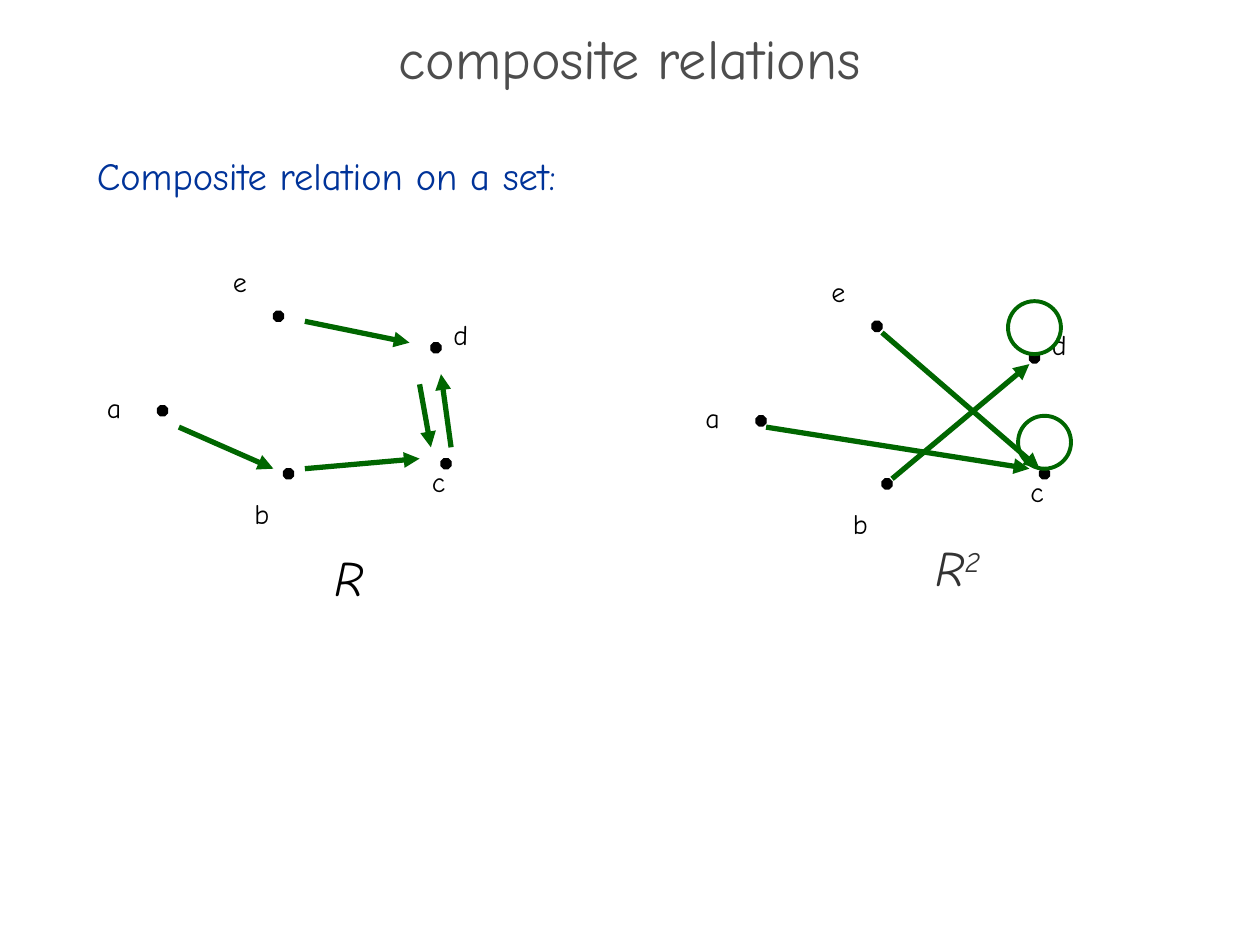
from lxml import etree
from pptx import Presentation
from pptx.dml.color import RGBColor
from pptx.enum.shapes import MSO_CONNECTOR, MSO_SHAPE
from pptx.enum.text import MSO_ANCHOR, PP_ALIGN
from pptx.oxml.ns import qn
from pptx.util import Inches, Pt

OCTAGON, OVAL = MSO_SHAPE.OCTAGON, MSO_SHAPE.OVAL
STRAIGHT = MSO_CONNECTOR.STRAIGHT
TOP, MIDDLE = MSO_ANCHOR.TOP, MSO_ANCHOR.MIDDLE
LEFT, CENTER = PP_ALIGN.LEFT, PP_ALIGN.CENTER

FONT = "Comic Neue"
COLORS = {"title": "4D4D4D", "body": "003399", "node": "000000",
          "edge": "006600", "square": "333333"}
NODE_SIZE, LOOP_SIZE = 0.08, 0.42

# Content: both graphs share one set of nodes, shifted by an offset
TITLE = "composite relations"
BODY = "Composite relation on a set:"
NODES = {  # name: (node left, top), (label left, top, width)
    "a": ((1.25, 3.22), (0.75, 3.05, 0.67)),
    "b": ((2.25, 3.72), (1.92, 3.89, 0.58)),
    "c": ((3.5, 3.64), (3.33, 3.64, 0.58)),
    "d": ((3.42, 2.72), (3.5, 2.47, 0.48)),
    "e": ((2.17, 2.47), (1.75, 2.05, 0.35)),
}
GRAPHS = [
    {"offset": (0, 0),
     "edges": [((1.42, 3.39), (2.17, 3.72)),   # a to b
               ((2.42, 3.72), (3.33, 3.64)),   # b to c
               ((3.58, 3.55), (3.5, 2.97)),    # c to d
               ((3.33, 3.05), (3.42, 3.55)),   # d to c
               ((2.42, 2.55), (3.25, 2.72))],  # e to d
     "loops": [],
     "caption": ("R", "", (2.56, 4.3, 0.58, 0.57), "node")},
    {"offset": (4.75, 0.08),
     "edges": [((6.08, 3.39), (8.17, 3.72)),   # a to c
               ((7.08, 3.8), (8.17, 2.89)),    # b to d
               ((7, 2.64), (8.25, 3.72))],     # e to c
     "loops": [(8.08, 3.3), (8, 2.39)],        # on c and d
     "caption": ("R", "2", (7.33, 4.22, 0.7, 0.57), "square")},
]


def rgb(name):
    return RGBColor.from_string(COLORS[name])


def add_text(slide, text, box, size, color, align=LEFT, anchor=TOP, wrap=True):
    tf = slide.shapes.add_textbox(*map(Inches, box)).text_frame
    tf.text = text
    tf.word_wrap = wrap
    tf.vertical_anchor = anchor
    p = tf.paragraphs[0]
    p.alignment = align
    p.font.name, p.font.size = FONT, Pt(size)
    style_run(p.runs[0], size, color)
    return p


def style_run(r, size, color, italic=None):
    r.font.name, r.font.size = FONT, Pt(size)
    r.font.color.rgb = rgb(color)
    r.font.italic = italic


def add_outline(slide, kind, left, top, size, color, width):
    sp = slide.shapes.add_shape(kind, *map(Inches, (left, top, size, size)))
    sp.shadow.inherit = False
    sp.fill.background()
    sp.line.color.rgb = rgb(color)
    sp.line.width = Pt(width)
    return sp


def add_arrow(slide, start, end):
    line = slide.shapes.add_connector(STRAIGHT, *map(Inches, start + end))
    line.line.color.rgb = rgb("edge")
    line.line.width = Pt(3)
    etree.SubElement(line.line._get_or_add_ln(), qn("a:tailEnd"), type="triangle")
    etree.SubElement(line._element.spPr, qn("a:effectLst"))


def add_graph(slide, graph):
    dx, dy = graph["offset"]
    # Nodes and their labels
    for name, ((x, y), (label_x, label_y, width)) in NODES.items():
        sp = add_outline(slide, OCTAGON, x + dx, y + dy, NODE_SIZE, "node", 0.75)
        sp.fill.solid()
        sp.fill.fore_color.rgb = rgb("node")
        add_text(slide, name, (label_x + dx, label_y + dy, width, 0.5), 16, "node",
                 wrap=name != "e")
    # Relations
    for start, end in graph["edges"]:
        add_arrow(slide, start, end)
    for left, top in graph["loops"]:
        add_outline(slide, OVAL, left, top, LOOP_SIZE, "edge", 2.25)
    # Caption with an optional exponent
    base, exponent, box, color = graph["caption"]
    p = add_text(slide, base, box, 28, color, wrap=False)
    if exponent:
        r = p.add_run()
        r.text = exponent
        r._r.get_or_add_rPr().set("baseline", "30000")
    for r in p.runs:
        style_run(r, 28, color, italic=True)


def main():
    prs = Presentation()
    prs.slide_width, prs.slide_height = Inches(10), Inches(7.5)
    slide = prs.slides.add_slide(prs.slide_layouts[6])

    # Heading and body text
    title = add_text(slide, TITLE, (0, 0.27, 10, 0.5), 32, "title", CENTER, MIDDLE)
    title.line_spacing = 0.7
    body = add_text(slide, BODY, (0.67, 1.16, 8.58, 5.92), 22, "body")
    body.space_after = Pt(6)

    for graph in GRAPHS:
        add_graph(slide, graph)
    prs.save("out.pptx")


if __name__ == "__main__":
    main()
